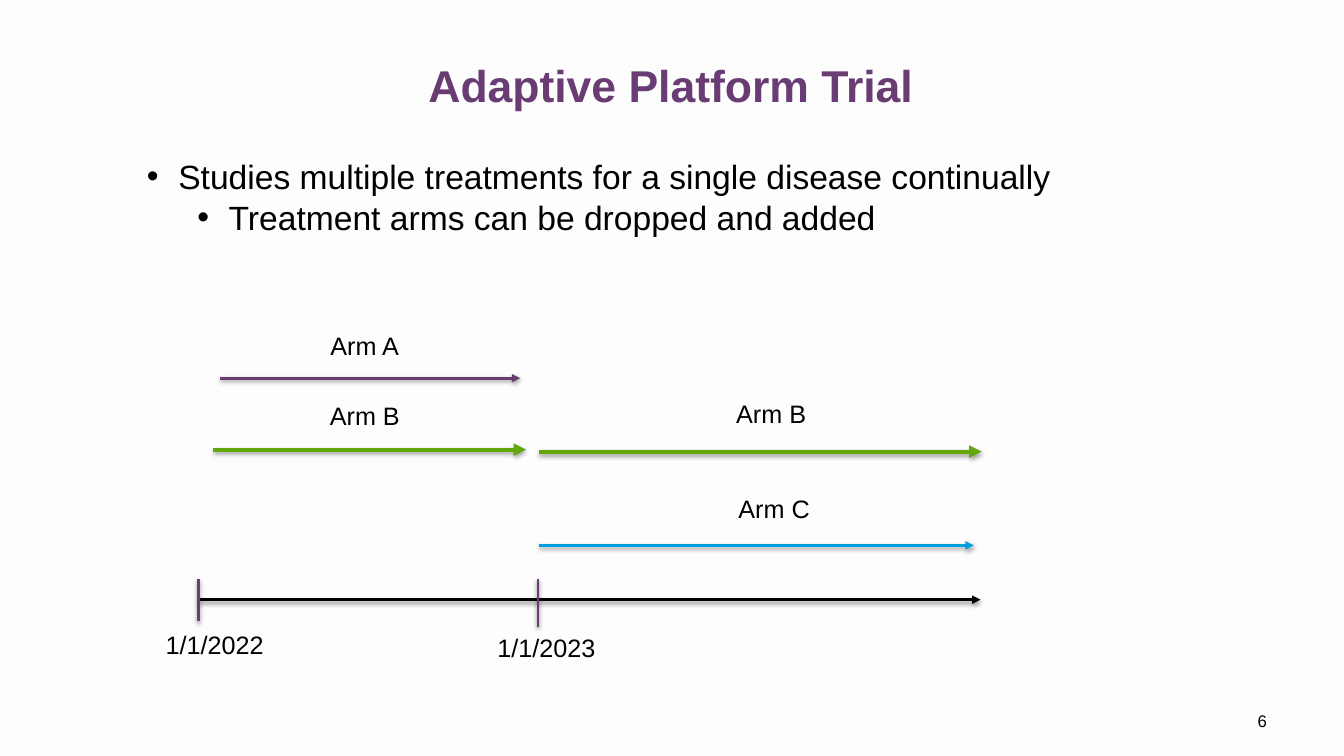
from lxml import etree
from pptx import Presentation
from pptx.dml.color import RGBColor
from pptx.enum.shapes import MSO_CONNECTOR
from pptx.enum.text import MSO_ANCHOR, MSO_AUTO_SIZE, PP_ALIGN
from pptx.oxml.ns import qn
from pptx.util import Cm, Pt

STRAIGHT = MSO_CONNECTOR.STRAIGHT
MIDDLE, BOTTOM = MSO_ANCHOR.MIDDLE, MSO_ANCHOR.BOTTOM
LEFT, CENTER, RIGHT = PP_ALIGN.LEFT, PP_ALIGN.CENTER, PP_ALIGN.RIGHT
NO_AUTOFIT = MSO_AUTO_SIZE.NONE

# Content
FONT = "Arial"
PURPLE, GREEN, BLUE, BLACK, PAPER = "693C74", "63A70A", "00A0DD", "000000", "FDFDFD"
TITLE = "Adaptive Platform Trial"
BULLETS = [  # level, text
    (0, "Studies multiple treatments for a single disease continually"),
    (1, "Treatment arms can be dropped and added"),
]
PAGE_NUMBER = "6"

# Timeline, in centimetres
START_X, CHANGE_X = 5, 13.56
TICK_TOP, AXIS_Y = 14.58, 15.11
ARROWS = [  # from x, to x, y, colour, width in points
    (5.54, 13.11, 9.53, PURPLE, 2),
    (5.38, 13.26, 11.33, GREEN, 3),
    (13.59, 24.54, 13.74, BLUE, 2),
    (START_X, 24.71, AXIS_Y, BLACK, 2),
    (13.59, 24.74, 11.38, GREEN, 3),
]
TICKS = [(CHANGE_X, 15.8), (START_X, 15.65)]  # x, bottom
LABELS = [  # text, left, top, width
    ("Arm A", 5.89, 8.2, 6.6),
    ("Arm B", 8.05, 9.96, 2.29),
    ("Arm B", 18.29, 9.91, 2.29),
    ("Arm C", 18.34, 12.29, 2.34),
    ("1/1/2022", 3.91, 15.72, 3),
    ("1/1/2023", 12.27, 15.8, 3),
]
LABEL_HEIGHT = 1.02


def color(hex_text):
    return RGBColor.from_string(hex_text)


def style(para, size, hex_text=BLACK, align=LEFT, bold=False):
    para.alignment = align
    para.space_before = Pt(0)
    font = para.font
    font.name, font.size, font.bold = FONT, Pt(size), bold
    font.color.rgb = color(hex_text)


def place(shape, left, top, width, height):
    shape.left, shape.top = Cm(left), Cm(top)
    shape.width, shape.height = Cm(width), Cm(height)


def add_text(page, text, left, top, width, size, align):
    box = page.shapes.add_textbox(Cm(left), Cm(top), Cm(width), Cm(LABEL_HEIGHT))
    frame = box.text_frame
    frame.word_wrap = True
    frame.vertical_anchor = MIDDLE
    frame.text = text
    style(frame.paragraphs[0], size, align=align)


def add_line(page, x1, y1, x2, y2, hex_text, width, arrow=False):
    line = page.shapes.add_connector(STRAIGHT, Cm(x1), Cm(y1), Cm(x2), Cm(y2))
    line.line.color.rgb = color(hex_text)
    line.line.width = Pt(width)
    if arrow:
        etree.SubElement(line.line._get_or_add_ln(), qn("a:tailEnd"), type="triangle")
    # Soft shadow straight below
    effects = etree.SubElement(line._element.spPr, qn("a:effectLst"))
    shadow = etree.SubElement(
        effects, qn("a:outerShdw"), blurRad=str(Pt(3.1)),
        dist=str(Pt(1.6 if width == 2 else 1.8)), dir="5400000", rotWithShape="0")
    tint = etree.SubElement(shadow, qn("a:srgbClr"), val=BLACK)
    etree.SubElement(tint, qn("a:alpha"), val="38000" if width == 2 else "35000")


def add_bullet(para, level):
    para.level = level
    props = para._p.get_or_add_pPr()
    props.set("marL", str(Cm(0.79 + 1.27 * level)))
    props.set("indent", str(Cm(-0.79)))
    etree.SubElement(props, qn("a:buFont"), typeface=FONT)
    etree.SubElement(props, qn("a:buChar"), char="•")


def main():
    deck = Presentation()
    deck.slide_width, deck.slide_height = Cm(33.87), Cm(19.05)
    page = deck.slides.add_slide(deck.slide_layouts[1])
    page.background.fill.solid()
    page.background.fill.fore_color.rgb = color(PAPER)

    # Title
    title = page.shapes.title
    place(title, 0.33, 0.25, 33.15, 2.69)
    title.fill.solid()
    title.fill.fore_color.rgb = color(PAPER)
    title.text_frame.text = TITLE
    title.text_frame.vertical_anchor = BOTTOM
    title.text_frame.auto_size = NO_AUTOFIT
    style(title.text_frame.paragraphs[0], 31.8, PURPLE, CENTER, True)

    # Bullet list
    body = page.placeholders[1]
    place(body, 3.45, 3.81, 24.69, 2.31)
    frame = body.text_frame
    frame.auto_size = NO_AUTOFIT
    frame.text = "\n".join(text for _, text in BULLETS)
    for para, (level, _) in zip(frame.paragraphs, BULLETS):
        add_bullet(para, level)
        style(para, 24)

    # Timeline
    for x1, x2, y, hex_text, width in ARROWS:
        add_line(page, x1, y, x2, y, hex_text, width, arrow=True)
    for x, bottom in TICKS:
        add_line(page, x, TICK_TOP, x, bottom, PURPLE, 2)
    for text, left, top, width in LABELS:
        add_text(page, text, left, top, width, 18, CENTER)

    # Page number
    add_text(page, PAGE_NUMBER, 30.48, 17.65, 1.7, 12, RIGHT)
    deck.save("out.pptx")


if __name__ == "__main__":
    main()
